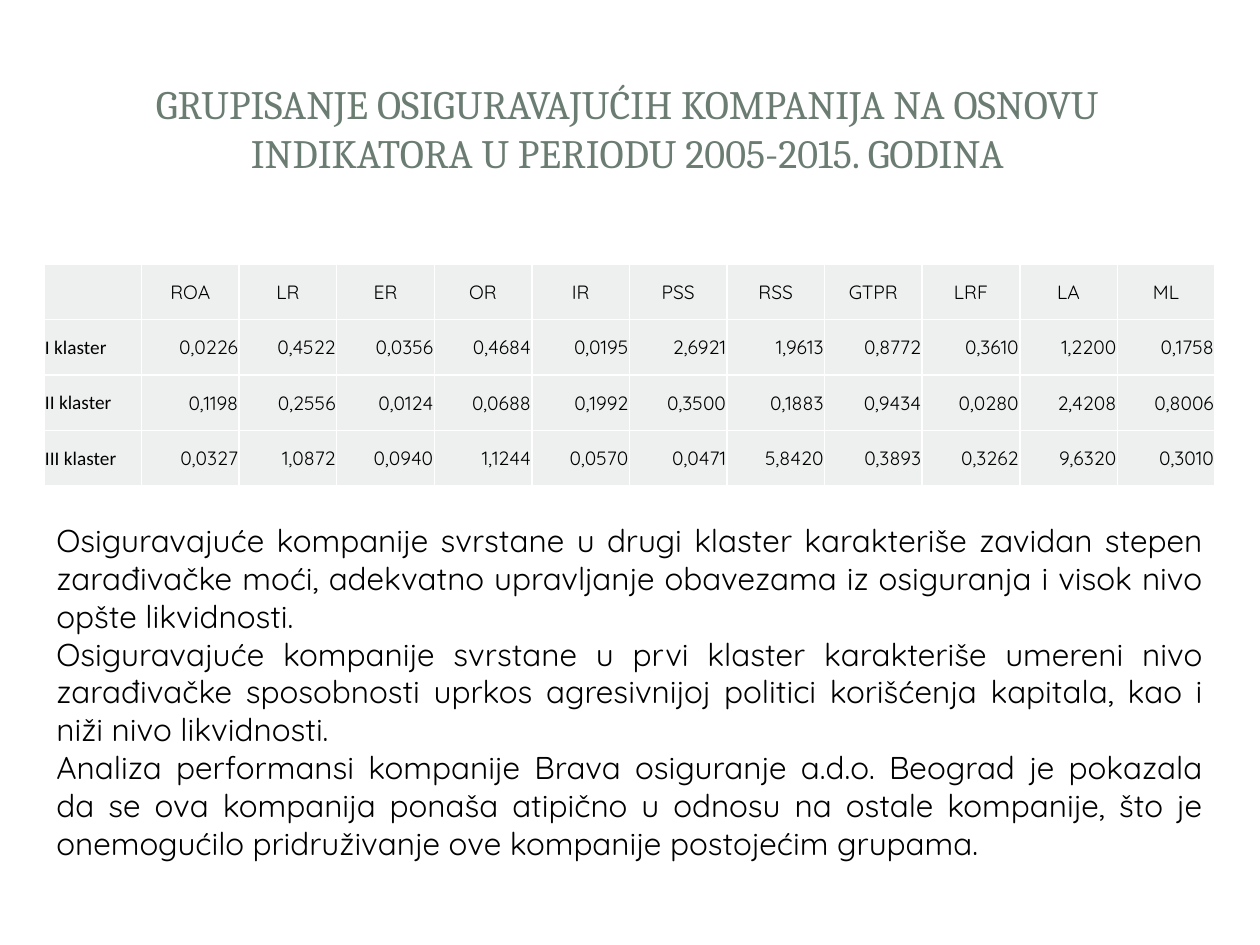
from lxml import etree
from pptx import Presentation
from pptx.dml.color import RGBColor
from pptx.enum import shapes, text
from pptx.oxml.ns import qn
from pptx import util as u

PX = 914400 / 126
ALIGN = text.PP_ALIGN


def px(n):
    return u.Emu(round(n * PX))


def rgb(value):
    return RGBColor.from_string(value)


class Deck:
    BODY, HEAD, LABEL = "Quicksand", "Cambria", "Calibri"
    INK, GREEN, CELL, PAPER = "000000", "6B7D72", "EEF0EF", "FFFFFF"

    def __init__(self, width, height):
        self.prs = Presentation()
        self.prs.slide_width, self.prs.slide_height = px(width), px(height)
        self.s = self.prs.slides.add_slide(self.prs.slide_layouts[6])

    def panel(self, box, kind=shapes.MSO_SHAPE.RECTANGLE, radius=None, opacity=100):
        sp = self.s.shapes.add_shape(kind, *map(px, box))
        sp.shadow.inherit = False
        sp.fill.solid()
        sp.fill.fore_color.rgb = rgb(self.PAPER)
        sp.line.fill.background()
        if radius is not None:
            sp.adjustments[0] = radius
        if opacity < 100:
            color = sp.fill._xPr.find(".//" + qn("a:srgbClr"))
            etree.SubElement(color, qn("a:alpha"), val=str(opacity * 1000))

    def paragraph(self, p, words, align, size, font, color):
        p.alignment = align
        r = p.add_run()
        r.text = words
        for name, value in {"size": u.Pt(size), "name": font}.items():
            setattr(r.font, name, value)
        r.font.color.rgb = rgb(color)

    def text(self, box, paragraphs, frame, **style):
        tf = self.s.shapes.add_textbox(*map(px, box)).text_frame
        for name, value in {"word_wrap": True, **frame}.items():
            setattr(tf, name, value)
        for i, words in enumerate(paragraphs):
            p = tf.add_paragraph() if i else tf.paragraphs[0]
            self.paragraph(p, words, **style)

    def cell(self, cell, words, align, font):
        # Borders come before the fill in the cell properties
        pr = cell._tc.get_or_add_tcPr()
        for side in ("a:lnL", "a:lnR", "a:lnT", "a:lnB"):
            ln = etree.SubElement(pr, qn(side), w=str(u.Pt(1)))
            fill = etree.SubElement(ln, qn("a:solidFill"))
            etree.SubElement(fill, qn("a:srgbClr"), val=self.PAPER)
        cell.fill.solid()
        cell.fill.fore_color.rgb = rgb(self.CELL)
        layout = {"vertical_anchor": text.MSO_ANCHOR.MIDDLE, "margin_left": px(1),
                  "margin_right": px(1), "margin_top": px(1), "margin_bottom": 0}
        for name, value in layout.items():
            setattr(cell, name, value)
        if words:
            self.paragraph(cell.text_frame.paragraphs[0], words, align, 11, font, self.INK)

    def table(self, box, rows):
        frame = self.s.shapes.add_table(len(rows), len(rows[0]), *map(px, box))
        for i, row in enumerate(rows):
            for j, words in enumerate(row):
                align = ALIGN.CENTER if i == 0 else ALIGN.RIGHT if j else ALIGN.LEFT
                font = self.BODY if j else self.LABEL
                self.cell(frame.table.cell(i, j), words, align, font)


TITLE = "GRUPISANJE OSIGURAVAJUĆIH KOMPANIJA NA OSNOVU INDIKATORA U PERIODU 2005-2015. GODINA"

INDICATORS = "ROA LR ER OR IR PSS RSS GTPR LRF LA ML"
CLUSTERS = {
    "I klaster": "0,0226 0,4522 0,0356 0,4684 0,0195 2,6921 1,9613 0,8772 0,3610 1,2200 0,1758",
    "II klaster": "0,1198 0,2556 0,0124 0,0688 0,1992 0,3500 0,1883 0,9434 0,0280 2,4208 0,8006",
    "III klaster": "0,0327 1,0872 0,0940 1,1244 0,0570 0,0471 5,8420 0,3893 0,3262 9,6320 0,3010",
}

FINDINGS = [
    "Osiguravajuće kompanije svrstane u drugi klaster karakteriše zavidan stepen "
    "zarađivačke moći, adekvatno upravljanje obavezama iz osiguranja i visok nivo "
    "opšte likvidnosti.",
    "Osiguravajuće kompanije svrstane u prvi klaster karakteriše umereni nivo "
    "zarađivačke sposobnosti uprkos agresivnijoj politici korišćenja kapitala, kao i "
    "niži nivo likvidnosti.",
    "Analiza performansi kompanije Brava osiguranje a.d.o. Beograd je pokazala "
    "da se ova kompanija ponaša atipično u odnosu na ostale kompanije, što je "
    "onemogućilo pridruživanje ove kompanije postojećim grupama.",
]


def main():
    deck = Deck(1260, 945)

    # Page and title panels
    deck.panel((13, 14, 1235, 918), shapes.MSO_SHAPE.ROUNDED_RECTANGLE, radius=0.02)
    deck.panel((38, 38, 1184, 183), opacity=83)
    deck.panel((52, 52, 1155, 154))

    # Title
    deck.text((59, 56, 1138, 144), [TITLE], {"vertical_anchor": text.MSO_ANCHOR.MIDDLE},
              align=ALIGN.CENTER, size=23, font=deck.HEAD, color=deck.GREEN)

    # Indicators by cluster
    rows = [["", *INDICATORS.split()]]
    rows += [[name, *values.split()] for name, values in CLUSTERS.items()]
    deck.table((44, 264, 1171, 222), rows)

    # Findings
    deck.text((44, 515, 1171, 394), FINDINGS, {"auto_size": text.MSO_AUTO_SIZE.SHAPE_TO_FIT_TEXT},
              align=ALIGN.JUSTIFY, size=18, font=deck.BODY, color=deck.INK)

    deck.prs.save("out.pptx")


if __name__ == "__main__":
    main()
